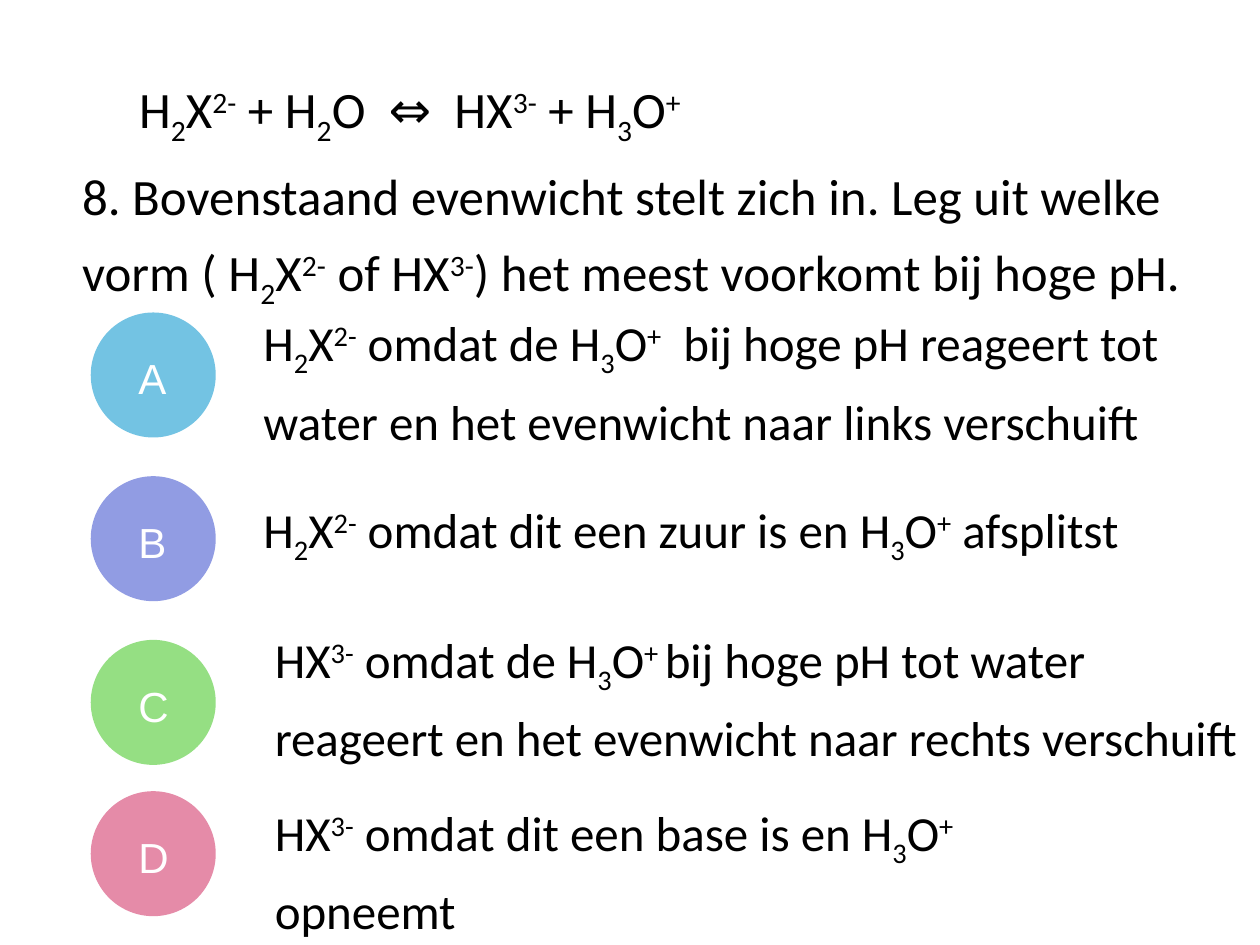
from pptx import Presentation
from pptx.dml.color import RGBColor
from pptx.enum import shapes, text
from pptx.util import Cm, Pt

BASELINES = {"_": "-25000", "^": "30000"}


def color(hex_value):
    return RGBColor.from_string(hex_value)


def write(paragraph, formula, size, font="Calibri", ink="000000", spacing=1.21):
    """Write pieces split by |, where _ marks subscript and ^ superscript."""
    paragraph.line_spacing = spacing
    paragraph.alignment = text.PP_ALIGN.LEFT
    for piece in formula.split("|"):
        run = paragraph.add_run()
        baseline = BASELINES.get(piece[0])
        run.text = piece[1:] if baseline else piece
        for name, value in {"size": Pt(size), "name": font}.items():
            setattr(run.font, name, value)
        run.font.color.rgb = color(ink)
        if baseline:
            run.font._element.set("baseline", baseline)


prs = Presentation()
prs.slide_width, prs.slide_height = Cm(25.4), Cm(19.05)
slide = prs.slides.add_slide(prs.slide_layouts[5])

# Question with its equilibrium
question = slide.shapes.title
place = {"left": Cm(1.4), "top": Cm(1.14), "width": Cm(23.88), "height": Cm(5.21)}
for name, value in place.items():
    setattr(question, name, value)
question_frame = question.text_frame
question_frame.auto_size = text.MSO_AUTO_SIZE.NONE
question_frame.vertical_anchor = text.MSO_ANCHOR.TOP
equilibrium = question_frame.paragraphs[0]
write(equilibrium, "H|_2|X|^2-| + H|_2|O  ⇔  HX|^3-| + H|_3|O|^+", 29.1)
equilibrium._p.get_or_add_pPr().set("indent", str(Cm(1.15)))
task = question_frame.add_paragraph()
task.space_before = Pt(3)
write(task, "8. Bovenstaand evenwicht stelt zich in. Leg uit welke vorm ( H|_2|X|^2-"
            "| of HX|^3-|) het meest voorkomt bij hoge pH.", 29.1)

# Answers: letter, circle colour, circle top, answer box (cm), line spacing, wording
answers = [
    ("A", "73C3E3", 6.3, (5.21, 6.73, 20.07, 1.63), 1.21,
     "H|_2|X|^2-| omdat de H|_3|O|^+|  bij hoge pH reageert tot water "
     "en het evenwicht naar links verschuift"),
    ("B", "919CE3", 9.6, (5.21, 9.78, 17.6, 1.63), 1.21,
     "H|_2|X|^2-| omdat dit een zuur is en H|_3|O|^+| afsplitst"),
    ("C", "95DF83", 12.9, (5.44, 12.55, 19.81, 2.77), 1.2,
     "HX|^3-| omdat de H|_3|O|^+ |bij hoge pH tot water reageert "
     "en het evenwicht naar rechts verschuift"),
    ("D", "E58BA8", 15.95, (5.44, 16.61, 17.09, 1.63), 1.2,
     "HX|^3-| omdat dit een base is en H|_3|O|^+ |opneemt"),
]
frame_format = {
    "word_wrap": True,
    "vertical_anchor": text.MSO_ANCHOR.MIDDLE,
    "margin_left": Cm(0.1), "margin_right": Cm(0.1),
    "margin_top": Cm(0.1), "margin_bottom": Cm(0.1),
}
for letter, fill, top, box, spacing, wording in answers:
    # Lettered circle
    badge = slide.shapes.add_group_shape()
    circle = badge.shapes.add_shape(
        shapes.MSO_SHAPE.OVAL, Cm(1.83), Cm(top), Cm(2.52), Cm(2.52))
    circle.shadow.inherit = False
    circle.fill.solid()
    circle.fill.fore_color.rgb = color(fill)
    circle.line.fill.background()
    label = badge.shapes.add_textbox(Cm(2.69), Cm(top + 0.62), Cm(0.99), Cm(1.19))

    # Answer wording
    answer = slide.shapes.add_textbox(*map(Cm, box))
    for part in (label, answer):
        for name, value in frame_format.items():
            setattr(part.text_frame, name, value)
    write(label.text_frame.paragraphs[0], letter, 24, "Arial", "FFFFFF", 1.2)
    write(answer.text_frame.paragraphs[0], wording, 28, spacing=spacing)

prs.save("out.pptx")
